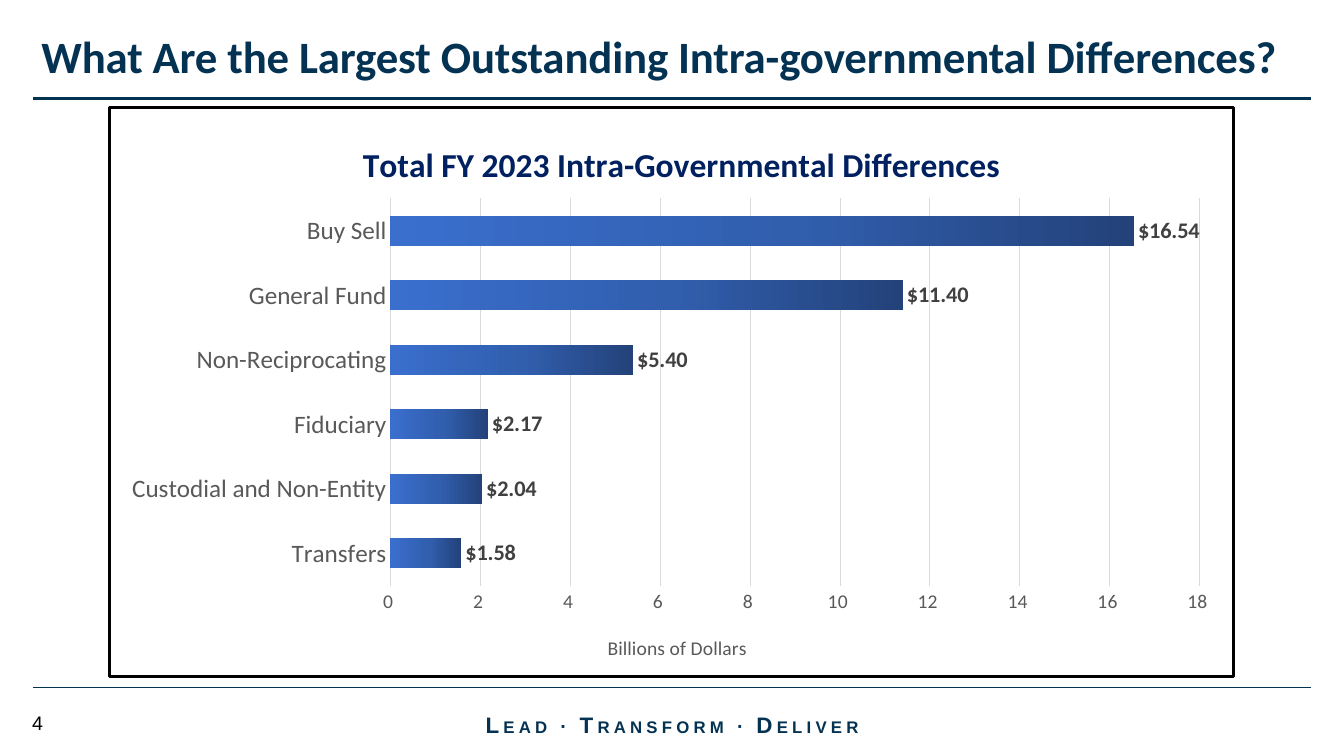
from copy import deepcopy

from lxml import etree
from pptx import Presentation
from pptx.chart.data import CategoryChartData
from pptx.dml.color import RGBColor
from pptx.enum import chart as ch, shapes, text
from pptx.oxml import parse_xml
from pptx.oxml.ns import nsdecls, qn
from pptx.util import Inches, Pt

NAVY = RGBColor(0x04, 0x32, 0x53)
TITLE_BLUE = RGBColor(0x00, 0x20, 0x60)
BLACK = RGBColor(0, 0, 0)
DARK_GREY = RGBColor(0x40, 0x40, 0x40)
GREY = RGBColor(0x59, 0x59, 0x59)
LIGHT_GREY = RGBColor(0xD9, 0xD9, 0xD9)
BAR_STOPS = [(0, RGBColor(0x23, 0x42, 0x7A)),
             (0.45, RGBColor(0x31, 0x5E, 0xAD)),
             (1, RGBColor(0x3A, 0x6F, 0xCE))]
DIFFERENCES = {"Transfers": 1.58, "Custodial and Non-Entity": 2.04, "Fiduciary": 2.17,
               "Non-Reciprocating": 5.40, "General Fund": 11.40, "Buy Sell": 16.54}
MOTTO = [("L", 16), ("EAD ", 12), ("∙ ", 14), ("T", 16), ("RANSFORM ", 12),
         ("∙ ", 14), ("D", 16), ("ELIVER", 12)]


def style(font, size, color, bold=False, name="Calibri"):
    """Set the look of a font."""
    font.name, font.size, font.bold = name, Pt(size), bold
    font.color.rgb = color


def track(run, hundredths):
    """Set the letter spacing of a run."""
    run.font._element.set("spc", str(hundredths))


def place(shape, left, top, width, height):
    """Move and size a shape in inches."""
    shape.left, shape.top = Inches(left), Inches(top)
    shape.width, shape.height = Inches(width), Inches(height)


def add_rule(slide, left, top, width, weight):
    """Draw a horizontal navy rule."""
    rule = slide.shapes.add_connector(shapes.MSO_CONNECTOR.STRAIGHT, Inches(left), Inches(top),
                                      Inches(left + width), Inches(top))
    rule.line.color.rgb = NAVY
    rule.line.width = Pt(weight)
    etree.SubElement(rule._element.spPr, qn("a:effectLst"))


def add_heading(slide, left, top, width):
    """Fill the title placeholder and underline it."""
    heading = slide.shapes.title
    place(heading, left - 0.03, top, width - 0.05, 0.52)
    frame = heading.text_frame
    frame.text = "What Are the Largest Outstanding Intra-governmental Differences?"
    frame.word_wrap = True
    frame.auto_size = text.MSO_AUTO_SIZE.NONE
    frame.vertical_anchor = text.MSO_ANCHOR.MIDDLE
    line = frame.paragraphs[0]
    line.alignment = text.PP_ALIGN.LEFT
    line.line_spacing = Pt(29.1)
    line._p.get_or_add_pPr().set("marL", str(Inches(0.01)))
    style(line.runs[0].font, 32, NAVY, True)
    track(line.runs[0], -10)
    add_rule(slide, left, top + 0.62, width, 2.25)


def add_footer(slide, left, top, width):
    """Place the rule, the page number and the motto."""
    add_rule(slide, left, top, width, 0.75)
    number = slide.shapes.add_textbox(Inches(left - 0.11), Inches(top + 0.18),
                                      Inches(1.67), Inches(0.33)).text_frame
    number.text = "4"
    number.word_wrap = True
    style(number.paragraphs[0].runs[0].font, 14, BLACK, name="Arial")
    motto = slide.shapes.add_textbox(Inches(left + 3.44), Inches(top + 0.17),
                                     Inches(5.79), Inches(0.4)).text_frame
    motto.word_wrap = True
    motto.vertical_anchor = text.MSO_ANCHOR.MIDDLE
    line = motto.paragraphs[0]
    line.alignment = text.PP_ALIGN.CENTER
    for part, size in MOTTO:
        run = line.add_run()
        run.text = part
        style(run.font, size, NAVY, True, "Arial")
        track(run, 300)


def set_layout(parent, inner=False, **fractions):
    """Give a chart part a manual layout in fractions of the chart."""
    for old in parent.findall(qn("c:layout")):
        parent.remove(old)
    target = '<c:layoutTarget val="inner"/>' if inner else ""
    modes = "".join(f'<c:{key}Mode val="edge"/>' for key in "xy")
    values = "".join(f'<c:{key} val="{value}"/>' for key, value in fractions.items())
    layout = parse_xml(f'<c:layout {nsdecls("c")}><c:manualLayout>{target}{modes}{values}'
                       '</c:manualLayout></c:layout>')
    parent.insert(0 if inner else 1, layout)


def set_title(title, words, size, color, bold, x, y):
    """Write and place a chart or axis title."""
    title.text_frame.text = words
    style(title.text_frame.paragraphs[0].runs[0].font, size, color, bold)
    set_layout(title._element, x=x, y=y)


def add_border(chart):
    """Frame the chart area in black."""
    frame = parse_xml(f'<c:spPr {nsdecls("c", "a")}><a:noFill/><a:ln w="{Pt(2.25)}"><a:solidFill>'
                      f'<a:srgbClr val="{BLACK}"/></a:solidFill></a:ln></c:spPr>')
    chart._chartSpace.find(qn("c:chart")).addnext(frame)


def style_axes(chart):
    """Format the category and value axes."""
    categories, values = chart.category_axis, chart.value_axis
    for axis, size in ((categories, 18), (values, 14)):
        axis.major_tick_mark = axis.minor_tick_mark = ch.XL_TICK_MARK.NONE
        style(axis.tick_labels.font, size, GREY)
    categories.format.line.color.rgb = LIGHT_GREY
    categories.format.line.width = Pt(1)
    values.format.line.fill.background()
    values.minimum_scale, values.maximum_scale, values.major_unit = 0, 18, 2
    values.tick_labels.number_format = r"0_);[Red]\(0\)"
    values.tick_labels.number_format_is_linked = False
    grid = values.major_gridlines.format.line
    grid.color.rgb = LIGHT_GREY
    grid.width = Pt(0.75)
    set_title(values.axis_title, "Billions of Dollars", 14, GREY, False, 0.44, 0.92)


def style_bars(plot):
    """Format the bars and their value labels."""
    plot.vary_by_categories = False
    plot.gap_width, plot.overlap = 115, -20
    fill = plot.series[0].format.fill
    fill.gradient()
    fill.gradient_angle = 180
    stops = plot.series[0]._element.find(".//" + qn("a:gsLst"))
    stops.append(deepcopy(stops[-1]))
    for stop, (position, color) in zip(fill.gradient_stops, BAR_STOPS):
        stop.position, stop.color.rgb = position, color
    plot.has_data_labels = True
    labels = plot.data_labels
    labels.show_value = True
    labels.position = ch.XL_LABEL_POSITION.OUTSIDE_END
    labels.number_format = r'"$"#,##0.00_);[Red]\("$"#,##0.00\)'
    labels.number_format_is_linked = False
    style(labels.font, 16, DARK_GREY, True)


def add_differences_chart(slide, left, top, width, height):
    """Add the framed bar chart of differences."""
    data = CategoryChartData()
    data.categories = list(DIFFERENCES)
    data.add_series("Series 1", list(DIFFERENCES.values()))
    chart = slide.shapes.add_chart(ch.XL_CHART_TYPE.BAR_CLUSTERED, Inches(left), Inches(top),
                                   Inches(width), Inches(height), data).chart
    style(chart.font, 10, BLACK)
    chart.has_legend = False
    set_title(chart.chart_title, "Total FY 2023 Intra-Governmental Differences",
              24, TITLE_BLUE, True, 0.22, 0.05)
    style_axes(chart)
    style_bars(chart.plots[0])
    set_layout(chart._chartSpace.find(".//" + qn("c:plotArea")), True,
               x=0.25, y=0.16, w=0.72, h=0.68)
    add_border(chart)


def main():
    """Build and save the slide."""
    deck = Presentation()
    deck.slide_width, deck.slide_height = Inches(13.33), Inches(7.5)
    slide = deck.slides.add_slide(deck.slide_layouts[5])
    add_footer(slide, 0.33, 6.82, 12.67)
    add_heading(slide, 0.33, 0.36, 12.67)
    add_differences_chart(slide, 1.07, 1.05, 11.18, 5.68)
    deck.save("out.pptx")


if __name__ == "__main__":
    main()
